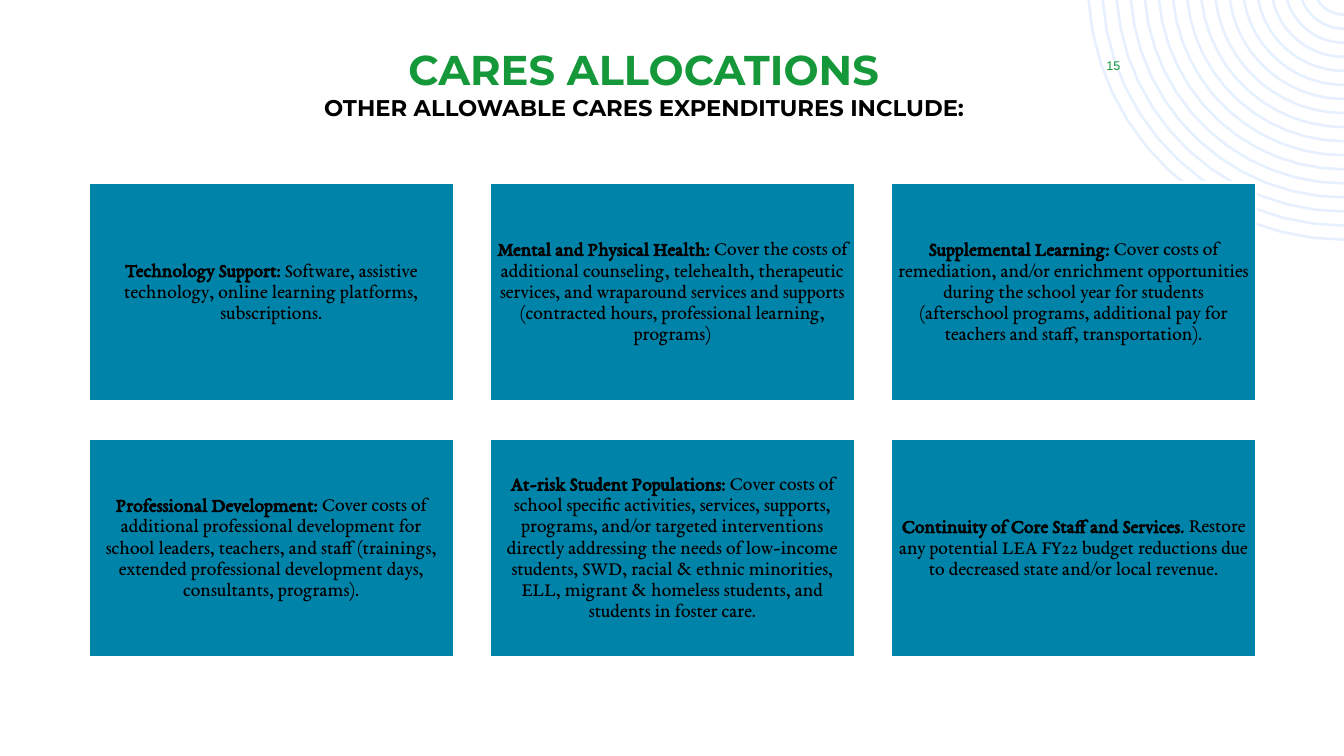
from math import asin, cos, pi, sin

from pptx import Presentation
from pptx.dml.color import RGBColor
from pptx.enum.shapes import MSO_SHAPE as Shape
from pptx.enum.text import MSO_ANCHOR as Anchor, PP_ALIGN as Align
from pptx.util import Cm, Pt

TITLE_LINES = [
    ("CARES ALLOCATIONS", "green", 29.7),
    ("OTHER ALLOWABLE CARES EXPENDITURES INCLUDE:", "black", 16.2),
]
PAGE_NUMBER = "15"
CARDS = [
    ("Technology Support: ",
     "Software, assistive technology, online learning platforms, subscriptions."),
    ("Mental and Physical Health: ",
     "Cover the costs of additional counseling, telehealth, therapeutic services, "
     "and wraparound services and supports (contracted hours, professional "
     "learning, programs)"),
    ("Supplemental Learning: ",
     "Cover costs of remediation, and/or enrichment opportunities during the "
     "school year for students (afterschool programs, additional pay for "
     "teachers and staff, transportation)."),
    ("Professional Development: ",
     "Cover costs of additional professional development for school leaders, "
     "teachers, and staff (trainings, extended professional development days, "
     "consultants, programs)."),
    ("At-risk Student Populations: ",
     "Cover costs of school specific activities, services, supports, programs, "
     "and/or targeted interventions directly addressing the needs of low-income "
     "students, SWD, racial & ethnic minorities, ELL, migrant & homeless "
     "students, and students in foster care."),
    ("Continuity of Core Staff and Services. ",
     "Restore any potential LEA FY22 budget reductions due to decreased state "
     "and/or local revenue."),
]
COLORS = {"green": "159839", "black": "000000", "white": "FFFFFF",
          "teal": "0083A9", "pale": "E6F0FE"}

PAGE_WIDTH, PAGE_HEIGHT = 33.87, 19.05
COLUMNS = 3
CARD_LEFT, CARD_TOP, CARD_WIDTH, CARD_HEIGHT = 2.24, 4.6, 9.2, 5.51
COLUMN_PITCH, ROW_PITCH = 10.11, 6.45
RING_COUNT, RING_STEPS = 17, 12
RING_RISE, SMALLEST_RING, LARGEST_RING = 0.41, 0.78, 6.45


def color(name):
    return RGBColor.from_string(COLORS[name])


def set_line(shape, ink, width):
    shape.shadow.inherit = False
    shape.line.color.rgb = color(ink)
    shape.line.width = Pt(width)


def set_frame(shape, anchor, side, edge):
    frame = shape.text_frame
    formats = {"word_wrap": True, "vertical_anchor": anchor,
               "margin_left": Cm(side), "margin_right": Cm(side),
               "margin_top": Cm(edge), "margin_bottom": Cm(edge)}
    for name, value in formats.items():
        setattr(frame, name, value)
    para = frame.paragraphs[0]
    para.alignment = Align.CENTER
    return para


def add_span(para, text, font, size, ink, bold=False):
    span = para.add_run()
    span.text = text
    for name, value in {"name": font, "size": Pt(size), "bold": bold}.items():
        setattr(span.font, name, value)
    span.font.color.rgb = color(ink)


def arc(radius):
    start = asin(RING_RISE / radius)
    angles = [start + (pi / 2 - start) * step / RING_STEPS
              for step in range(RING_STEPS + 1)]
    return [(Cm(PAGE_WIDTH - radius * cos(angle)),
             Cm(radius * sin(angle) - RING_RISE)) for angle in angles]


def add_rings(page):
    gap = (LARGEST_RING - SMALLEST_RING) / (RING_COUNT - 1)
    arcs = [arc(SMALLEST_RING + index * gap) for index in range(RING_COUNT)]
    builder = page.shapes.build_freeform(*arcs[0][0])
    for index, points in enumerate(arcs):
        if index:
            builder.move_to(*points[0])
        builder.add_line_segments(points[1:], close=False)
    rings = builder.convert_to_shape()
    rings.fill.background()
    set_line(rings, "pale", 1.8)


def add_title(page):
    box = page.shapes.add_textbox(Cm(5.11), Cm(0.97), Cm(22.23), Cm(2.13))
    para = set_frame(box, Anchor.TOP, 0.25, 0.13)
    for index, (text, ink, size) in enumerate(TITLE_LINES):
        if index:
            para.add_line_break()
        add_span(para, text, "Montserrat", size, ink, True)


def add_page_number(page):
    box = page.shapes.add_textbox(Cm(27.03), Cm(1.27), Cm(2.06), Cm(0.76))
    para = set_frame(box, Anchor.MIDDLE, 0.25, 0.13)
    add_span(para, PAGE_NUMBER, "Arial", 9, "green")


def add_cards(page):
    for index, (heading, detail) in enumerate(CARDS):
        row, column = divmod(index, COLUMNS)
        card = page.shapes.add_shape(
            Shape.RECTANGLE,
            Cm(CARD_LEFT + column * COLUMN_PITCH), Cm(CARD_TOP + row * ROW_PITCH),
            Cm(CARD_WIDTH), Cm(CARD_HEIGHT))
        card.fill.solid()
        card.fill.fore_color.rgb = color("teal")
        set_line(card, "white", 1.5)
        para = set_frame(card, Anchor.MIDDLE, 0.15, 0.15)
        para.line_spacing = 0.9
        add_span(para, heading, "EB Garamond", 14, "black", True)
        add_span(para, detail, "EB Garamond", 14, "black")


def main():
    deck = Presentation()
    deck.slide_width, deck.slide_height = Cm(PAGE_WIDTH), Cm(PAGE_HEIGHT)
    page = deck.slides.add_slide(deck.slide_layouts[6])
    add_rings(page)
    add_title(page)
    add_page_number(page)
    add_cards(page)
    deck.save("out.pptx")


if __name__ == "__main__":
    main()
